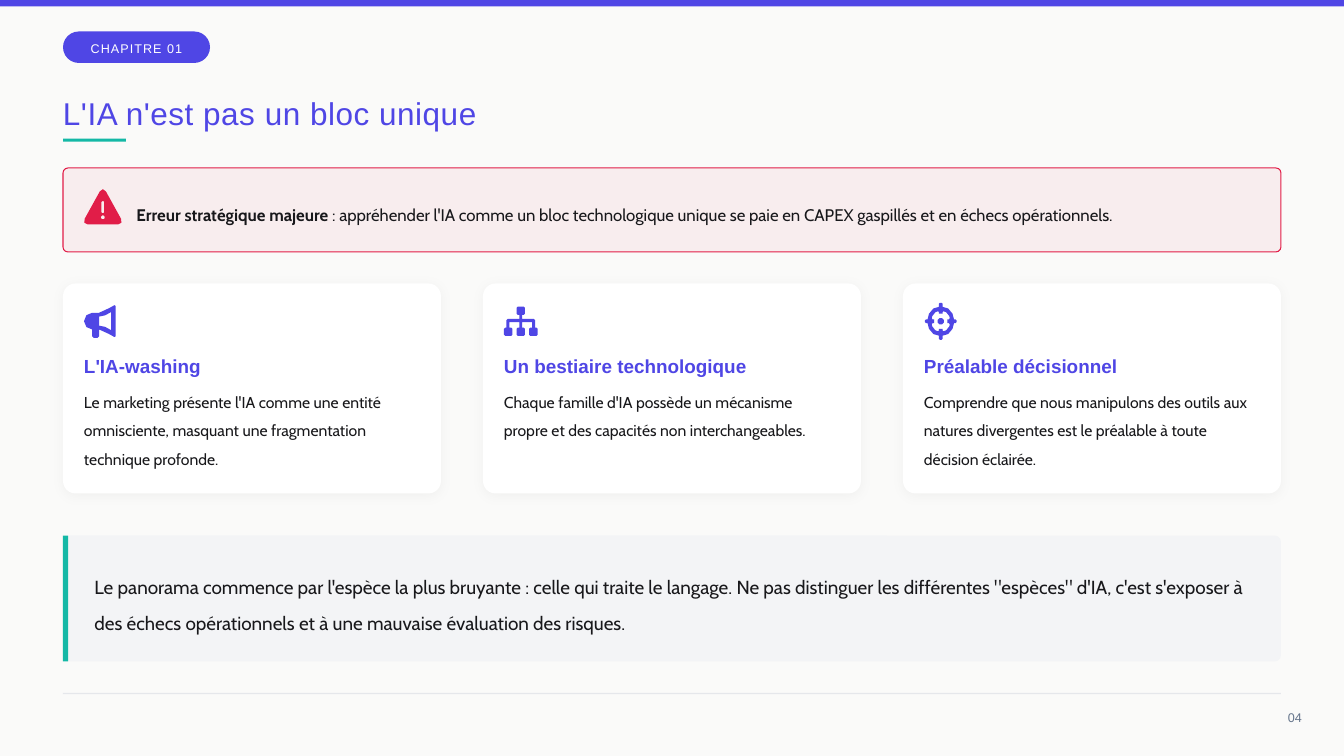
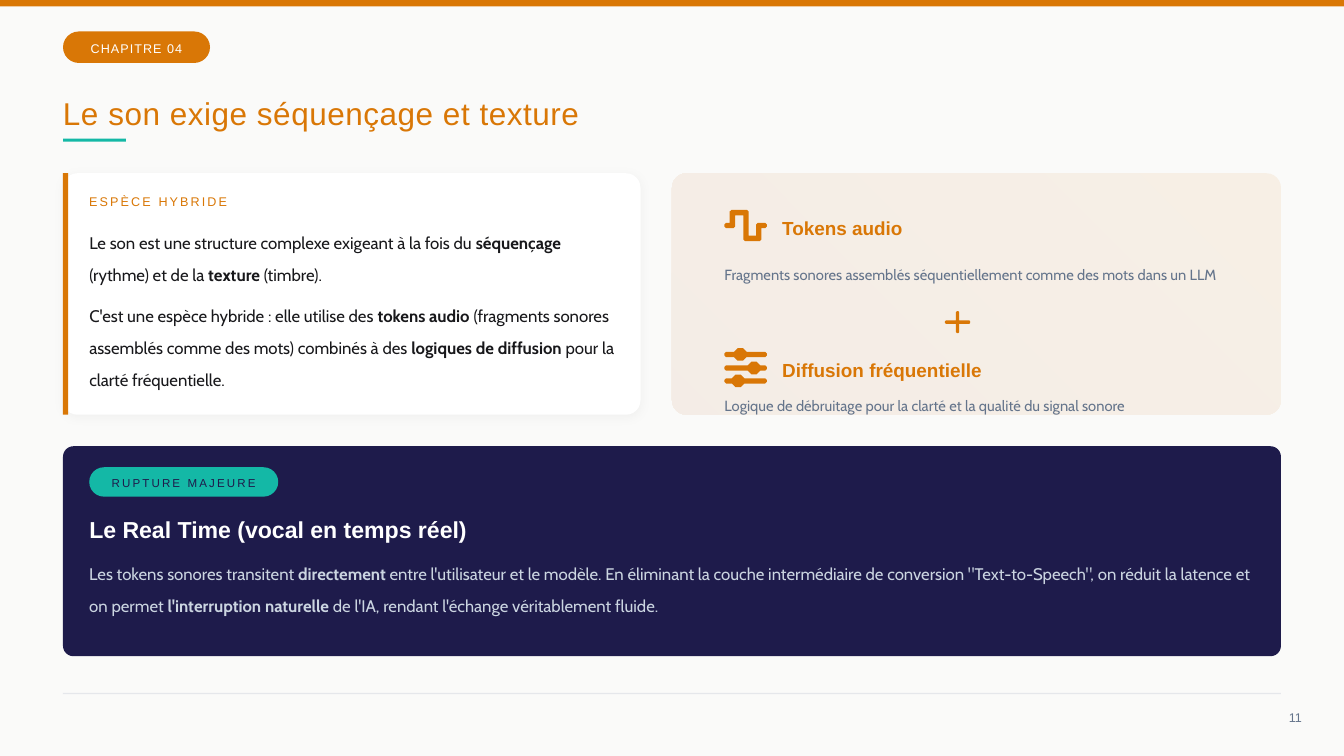
from math import dist

from lxml import etree
from pptx import Presentation
from pptx.dml.color import RGBColor
from pptx.enum.shapes import MSO_SHAPE
from pptx.enum.text import MSO_ANCHOR, PP_ALIGN
from pptx.oxml.ns import qn
from pptx.util import Pt

PX = 12700
RECT, ROUNDED = MSO_SHAPE.RECTANGLE, MSO_SHAPE.ROUNDED_RECTANGLE
TOP, MIDDLE = MSO_ANCHOR.TOP, MSO_ANCHOR.MIDDLE
LEFT, CENTER, RIGHT = PP_ALIGN.LEFT, PP_ALIGN.CENTER, PP_ALIGN.RIGHT
INDIGO, AMBER, TEAL, RED, NAVY = "4F46E5", "D97706", "14B8A6", "E11D48", "1E1B4B"
INK, SLATE, WHITE = "18181B", "64748B", "FFFFFF"
HEADING = {"name": "Arial", "bold": True}
LABEL = {"name": "Arial", "bold": False}
BODY = {"name": "Cabin"}

hex_colour = RGBColor.from_string


def add_panel(page, kind, box, fill, radius=None, alpha=None, border=None, blur=None):
    """Draw a preset shape; a tuple of two colours as fill gives a gradient."""
    panel = page.shapes.add_shape(kind, *[value * PX for value in box])
    panel.shadow.inherit = False
    if radius is not None:
        panel.adjustments[0] = radius
    if isinstance(fill, tuple):
        panel.fill.gradient()
        panel.fill.gradient_angle = 225
        for stop, colour, place in zip(panel.fill.gradient_stops, fill, (0, 1)):
            stop.color.rgb = hex_colour(colour)
            stop.position = place
    else:
        panel.fill.solid()
        panel.fill.fore_color.rgb = hex_colour(fill)
    properties = panel._element.spPr
    if alpha:
        for colour in properties.iter(qn("a:srgbClr")):
            etree.SubElement(colour, qn("a:alpha"), val=str(alpha * 1000))
    if border:
        panel.line.color.rgb = hex_colour(border)
        panel.line.width = Pt(1)
    else:
        panel.line.fill.background()
    if blur:
        shadow = etree.SubElement(
            properties.find(qn("a:effectLst")), qn("a:outerShdw"),
            blurRad=str(blur * PX), dist=str(2 * PX), dir="5400000",
            algn="ctr", rotWithShape="0")
        black = etree.SubElement(shadow, qn("a:srgbClr"), val="000000")
        etree.SubElement(black, qn("a:alpha"), val="3000")


def add_text(page, box, paragraphs, style, size, colour, leading=1.2,
             anchor=MIDDLE, align=LEFT, wrap=False, tracking=None):
    """Write paragraphs in a box; ** switches bold on and off."""
    frame = page.shapes.add_textbox(*[value * PX for value in box]).text_frame
    settings = {"word_wrap": wrap, "vertical_anchor": anchor, "margin_left": 0,
                "margin_top": 0, "margin_right": 0, "margin_bottom": 0}
    for name, value in settings.items():
        setattr(frame, name, value)
    for number, text in enumerate(paragraphs):
        para = frame.add_paragraph() if number else frame.paragraphs[0]
        para.alignment = align
        para.line_spacing = leading
        if number:
            para.space_before = Pt(8)
        for order, part in enumerate(text.split("**")):
            if not part:
                continue
            span = para.add_run()
            span.text = part
            font_format = {"size": Pt(size), "bold": order % 2 == 1, **style}
            for name, value in font_format.items():
                setattr(span.font, name, value)
            span.font.color.rgb = hex_colour(colour)
            if tracking:
                span._r.get_or_add_rPr().set("spc", str(int(tracking * 100)))


deck = Presentation()
deck.slide_width, deck.slide_height = 1280 * PX, 720 * PX

# Bands, chapter, title and footer shared by both slides
pages = []
for accent, chapter, title, title_width, folio in (
    (INDIGO, "CHAPITRE 01", "L'IA n'est pas un bloc unique", 800, "04"),
    (AMBER, "CHAPITRE 04", "Le son exige séquençage et texture", 700, "11"),
):
    page = deck.slides.add_slide(deck.slide_layouts[6])
    pages.append(page)
    page.background.fill.solid()
    page.background.fill.fore_color.rgb = hex_colour("FAFAF9")
    add_panel(page, RECT, (0, 0, 1280, 6), accent)
    pill = (60, 30, 140, 30)
    add_panel(page, ROUNDED, pill, accent, radius=0.5)
    add_text(page, pill, [chapter], LABEL, 12, WHITE, align=CENTER, tracking=1)
    add_text(page, (60, 80, title_width, 45), [title], LABEL, 30, accent,
             leading=1.3, tracking=0.5)
    add_panel(page, RECT, (60, 132, 60, 3), TEAL)
    add_panel(page, RECT, (60, 660, 1160, 1), "E5E7EB")
    add_text(page, (1180, 670, 60, 24), [folio], LABEL, 12, SLATE, align=RIGHT)
species_page, sound_page = pages

# Slide 1: alert, three cards, closing quote
add_panel(species_page, ROUNDED, (60, 160, 1160, 80), RED, radius=0.06, alpha=6,
          border=RED)
add_text(species_page, (130, 165, 1070, 70),
         ["**Erreur stratégique majeure** : appréhender l'IA comme un bloc "
          "technologique unique se paie en CAPEX gaspillés et en échecs opérationnels."],
         BODY, 16, INK, leading=1.5, wrap=True)
cards = (
    ("L'IA-washing",
     "Le marketing présente l'IA comme une entité omnisciente, masquant une "
     "fragmentation technique profonde."),
    ("Un bestiaire technologique",
     "Chaque famille d'IA possède un mécanisme propre et des capacités non "
     "interchangeables."),
    ("Préalable décisionnel",
     "Comprendre que nous manipulons des outils aux natures divergentes est le "
     "préalable à toute décision éclairée."),
)
for column, (heading, detail) in enumerate(cards):
    left = 60 + 400 * column
    add_panel(species_page, ROUNDED, (left, 270, 360, 200), WHITE, radius=0.06, blur=12)
    add_text(species_page, (left + 20, 332, 320, 28), [heading], HEADING, 18, INDIGO)
    add_text(species_page, (left + 20, 365, 320, 90), [detail], BODY, 15, INK,
             leading=1.5, anchor=TOP, wrap=True)
add_panel(species_page, ROUNDED, (60, 510, 1160, 120), "F3F4F6", radius=0.05)
add_panel(species_page, RECT, (60, 510, 5, 120), TEAL)
add_text(species_page, (90, 520, 1100, 100),
         ["Le panorama commence par l'espèce la plus bruyante : celle qui traite le "
          "langage. Ne pas distinguer les différentes \"espèces\" d'IA, c'est s'exposer "
          "à des échecs opérationnels et à une mauvaise évaluation des risques."],
         BODY, 18, INK, leading=1.6, wrap=True)

# Slide 2: hybrid species, its two parts, real-time break
add_panel(sound_page, ROUNDED, (60, 165, 550, 230), WHITE, radius=0.06, blur=10)
add_panel(sound_page, RECT, (60, 165, 5, 230), AMBER)
add_text(sound_page, (85, 178, 200, 24), ["ESPÈCE HYBRIDE"], LABEL, 12, AMBER, tracking=2)
add_text(sound_page, (85, 210, 505, 170),
         ["Le son est une structure complexe exigeant à la fois du **séquençage** "
          "(rythme) et de la **texture** (timbre).",
          "C'est une espèce hybride : elle utilise des **tokens audio** (fragments "
          "sonores assemblés comme des mots) combinés à des **logiques de diffusion** "
          "pour la clarté fréquentielle."],
         BODY, 16, INK, leading=1.6, anchor=TOP, wrap=True)
add_panel(sound_page, ROUNDED, (640, 165, 580, 230), (AMBER, "B45309"), radius=0.06,
          alpha=8)
for heading, heading_box, detail, detail_box in (
    ("Tokens audio", (745, 195, 200, 40),
     "Fragments sonores assemblés séquentiellement comme des mots dans un LLM",
     (690, 245, 490, 50)),
    ("Diffusion fréquentielle", (745, 330, 250, 40),
     "Logique de débruitage pour la clarté et la qualité du signal sonore",
     (690, 370, 490, 25)),
):
    add_text(sound_page, heading_box, [heading], HEADING, 18, AMBER)
    add_text(sound_page, detail_box, [detail], BODY, 14, SLATE, leading=1.5,
             anchor=TOP, wrap=True)
add_panel(sound_page, ROUNDED, (60, 425, 1160, 200), NAVY, radius=0.05)
break_pill = (85, 445, 180, 28)
add_panel(sound_page, ROUNDED, break_pill, TEAL, radius=0.5)
add_text(sound_page, break_pill, ["RUPTURE MAJEURE"], LABEL, 11, NAVY, align=CENTER,
         tracking=2)
add_text(sound_page, (85, 485, 500, 32), ["Le Real Time (vocal en temps réel)"],
         HEADING, 22, WHITE)
add_text(sound_page, (85, 525, 1110, 80),
         ["Les tokens sonores transitent **directement** entre l'utilisateur et le "
          "modèle. En éliminant la couche intermédiaire de conversion "
          "\"Text-to-Speech\", on réduit la latence et on permet **l'interruption "
          "naturelle** de l'IA, rendant l'échange véritablement fluide."],
         BODY, 16, "CBD5E1", leading=1.6, anchor=TOP, wrap=True)

# Icon outlines, clockwise: (corner cut, corners), in tenths of a px from the icon's origin
warning = [
    (60, [(180, -30), (383, 338), (-23, 338)]),
    (8, [(167, 115), (193, 115), (193, 230), (167, 230)]),
    (11, [(162, 252), (198, 252), (198, 288), (162, 288)]),
]
megaphone = [
    (14, [(302, 0), (302, 317), (238, 281), (144, 238), (144, 317), (78, 317),
          (78, 238), (23, 215), (0, 159), (23, 102), (79, 79), (144, 79), (238, 36)]),
    (0, [(144, 115), (200, 104), (259, 72), (259, 245), (200, 213), (144, 202)]),
]
tree = [
    (12, [(120, 20), (200, 20), (200, 100), (174, 100), (174, 138), (296, 138),
          (296, 220), (320, 220), (320, 300), (240, 300), (240, 220), (268, 220),
          (268, 168), (174, 168), (174, 220), (200, 220), (200, 300), (120, 300),
          (120, 220), (146, 220), (146, 168), (52, 168), (52, 220), (80, 220),
          (80, 300), (0, 300), (0, 220), (24, 220), (24, 138), (146, 138),
          (146, 100), (120, 100)]),
]
target = [(17, [(131, 131), (189, 131), (189, 189), (131, 189)])]
for quarter in (
    [(18, -176), (18, -137), (70, -122), (112, -72), (126, -18), (151, -18)],
    [(18, -72), (18, -99), (52, -86), (82, -48), (88, -18), (62, -18)],
):
    half = quarter + [(x, -y) for x, y in reversed(quarter)]
    ring = half + [(-x, y) for x, y in reversed(half)]
    target.append((10, [(160 + x, 160 + y) for x, y in ring]))
wave = [
    (15, [(50, 50), (230, 50), (230, 295), (302, 295), (302, 173), (403, 173),
          (403, 223), (352, 223), (352, 346), (180, 346), (180, 101), (101, 101),
          (101, 223), (0, 223), (0, 173), (50, 173)]),
]
plus = [
    (9, [(104, 14), (136, 14), (136, 102), (240, 102), (240, 134), (136, 134),
         (136, 222), (104, 222), (104, 134), (0, 134), (0, 102), (104, 102)]),
]
sliders = []
for knob, row in ((151, 76), (281, 205), (130, 328)):
    upper = [(0, -25), (knob - 60, -25), (knob - 25, -60), (knob + 25, -60),
             (knob + 60, -25), (403, -25)]
    track = upper + [(x, -y) for x, y in reversed(upper)]
    sliders.append((15, [(x, row + y) for x, y in track]))

for page, colour, left, top, outlines in (
    (species_page, RED, 80, 180, warning),
    (species_page, INDIGO, 80, 290, megaphone),
    (species_page, INDIGO, 480, 290, tree),
    (species_page, INDIGO, 880, 290, target),
    (sound_page, AMBER, 690, 195, wave),
    (sound_page, AMBER, 900, 295, plus),
    (sound_page, AMBER, 690, 330, sliders),
):
    builder = None
    for cut, corners in outlines:
        points = []
        for before, corner, after in zip(corners[-1:] + corners[:-1], corners,
                                         corners[1:] + corners[:1]):
            x, y = left * 10 + corner[0], top * 10 + corner[1]
            (back_x, back_y), (next_x, next_y) = [
                (near[0] - corner[0], near[1] - corner[1]) for near in (before, after)]
            outward = back_y * next_x - back_x * next_y > 0
            sharp = back_x * next_x + back_y * next_y >= 0
            if not (cut and outward and sharp):
                points.append((x, y))
                continue
            back, ahead = cut / dist(corner, before), cut / dist(corner, after)
            start = (x + back_x * back, y + back_y * back)
            end = (x + next_x * ahead, y + next_y * ahead)
            points.append(start)
            if cut > 30:
                points.append([0.3 * (s + e) + 0.4 * c
                               for s, e, c in zip(start, end, (x, y))])
            points.append(end)
        if builder is None:
            builder = page.shapes.build_freeform(*points[0], scale=PX / 10)
        else:
            builder.move_to(*points[0])
        builder.add_line_segments(points[1:], close=True)
    icon = builder.convert_to_shape()
    icon.shadow.inherit = False
    icon.fill.solid()
    icon.fill.fore_color.rgb = hex_colour(colour)
    icon.line.fill.background()

deck.save("out.pptx")
